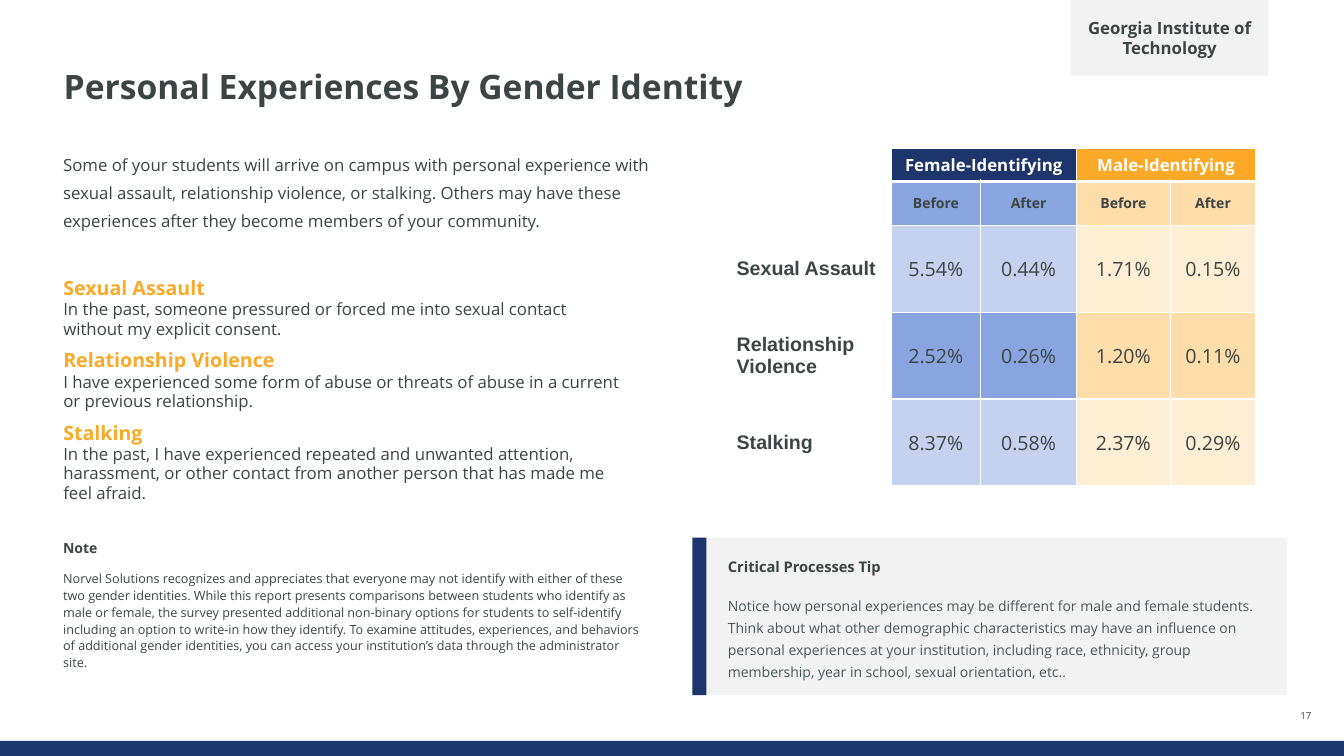
from lxml.etree import SubElement
from pptx import Presentation
from pptx.dml.color import RGBColor
from pptx.enum.shapes import MSO_SHAPE as Shape
from pptx.enum.text import MSO_ANCHOR as Anchor, MSO_AUTO_SIZE as AutoSize, PP_ALIGN as Align
from pptx.oxml.ns import qn
from pptx.util import Pt

WHITE = RGBColor(0xFF, 0xFF, 0xFF)
INK = RGBColor(0x3C, 0x45, 0x43)
TIP_INK = RGBColor(0x4C, 0x57, 0x58)
PALE_GREY = RGBColor(0xF2, 0xF2, 0xF2)
NAVY = RGBColor(0x1C, 0x36, 0x6B)
BLUE = RGBColor(0x88, 0xA5, 0xE0)
PALE_BLUE = RGBColor(0xC4, 0xD2, 0xEF)
ORANGE = RGBColor(0xFB, 0xA9, 0x27)
PEACH = RGBColor(0xFD, 0xDD, 0xA9)
PALE_PEACH = RGBColor(0xFE, 0xEE, 0xD4)

INTRO = ("Some of your students will arrive on campus with personal experience with "
         "sexual assault, relationship violence, or stalking. Others may have these "
         "experiences after they become members of your community.")
DEFINITIONS = [
    ("Sexual Assault",
     "In the past, someone pressured or forced me into sexual contact "
     "without my explicit consent."),
    ("Relationship Violence",
     "I have experienced some form of abuse or threats of abuse in a current "
     "or previous relationship."),
    ("Stalking",
     "In the past, I have experienced repeated and unwanted attention, harassment, "
     "or other contact from another person that has made me feel afraid."),
]
NOTE = ("Norvel Solutions recognizes and appreciates that everyone may not identify with "
        "either of these two gender identities. While this report presents comparisons "
        "between students who identify as male or female, the survey presented additional "
        "non-binary options for students to self-identify including an option to write-in "
        "how they identify. To examine attitudes, experiences, and behaviors of additional "
        "gender identities, you can access your institution’s data through the "
        "administrator site.")
TIP = ("Notice how personal experiences may be different for male and female students. "
       "Think about what other demographic characteristics may have an influence on "
       "personal experiences at your institution, including race, ethnicity, group "
       "membership, year in school, sexual orientation, etc..")
RATES = [
    ["", "Female-Identifying", "", "Male-Identifying", ""],
    ["", "Before", "After", "Before", "After"],
    ["Sexual Assault", "5.54%", "0.44%", "1.71%", "0.15%"],
    ["Relationship Violence", "2.52%", "0.26%", "1.20%", "0.11%"],
    ["Stalking", "8.37%", "0.58%", "2.37%", "0.29%"],
]
# Female and male fills of each table row
ROW_FILLS = [(NAVY, ORANGE), (BLUE, PEACH), (PALE_BLUE, PALE_PEACH),
             (BLUE, PEACH), (PALE_BLUE, PALE_PEACH)]
COLUMN_WIDTHS = [117.5, 64, 68.5, 67, 61]
ROW_HEIGHTS = [23, 31.5, 62, 62, 62]


def assign(target, values):
    for name, value in values.items():
        setattr(target, name, value)


class ReportSlide:
    font_name = "Open Sans"

    def __init__(self, deck):
        self.slide = deck.slides.add_slide(deck.slide_layouts[1])
        self.shapes = self.slide.shapes

    def add_run(self, paragraph, text, size, color=INK, bold=False, name=None):
        run = paragraph.add_run()
        run.text = text
        assign(run.font, {"size": Pt(size), "bold": bold, "name": name or self.font_name})
        run.font.color.rgb = color

    def frame(self, shape, anchor=Anchor.TOP, insets=(7.2, 3.6, 7.2, 3.6)):
        left, top, right, bottom = map(Pt, insets)
        assign(shape.text_frame, {
            "word_wrap": True, "auto_size": AutoSize.NONE, "vertical_anchor": anchor,
            "margin_left": left, "margin_top": top,
            "margin_right": right, "margin_bottom": bottom})
        return shape.text_frame

    def fill_text(self, frame, paragraphs, before=0, bullets_off=False, **paragraph_format):
        """Fill a frame; each paragraph is a list of run tuples, one per line."""
        for index, lines in enumerate(paragraphs):
            paragraph = frame.add_paragraph() if index else frame.paragraphs[0]
            if bullets_off:
                properties = paragraph._p.get_or_add_pPr()
                properties.set("marL", "0")
                properties.set("indent", "0")
                SubElement(properties, qn("a:buNone"))
            assign(paragraph, {"alignment": Align.LEFT, **paragraph_format,
                               "space_before": Pt(before if index else 0)})
            for line_index, line in enumerate(lines):
                if line_index:
                    paragraph.add_line_break()
                self.add_run(paragraph, *line)

    def place(self, shape, box):
        assign(shape, dict(zip(("left", "top", "width", "height"), map(Pt, box))))

    def title(self, box, text):
        self.place(self.shapes.title, box)
        frame = self.frame(self.shapes.title, insets=(0, 0, 0, 0))
        self.fill_text(frame, [[(text, 24, INK, True)]], line_spacing=0.9)

    def body(self, box, paragraphs, **style):
        body = self.slide.placeholders[1]
        self.place(body, box)
        self.fill_text(self.frame(body), paragraphs, bullets_off=True, **style)

    def text(self, box, paragraphs, anchor=Anchor.TOP, insets=(7.2, 3.6, 7.2, 3.6), **style):
        textbox = self.shapes.add_textbox(*map(Pt, box))
        self.fill_text(self.frame(textbox, anchor, insets), paragraphs, **style)

    def panel(self, box, fill, paragraphs=(), insets=(7.2, 0, 7.2, 0), **style):
        panel = self.shapes.add_shape(Shape.RECTANGLE, *map(Pt, box))
        panel.shadow.inherit = False
        panel.fill.solid()
        panel.fill.fore_color.rgb = fill
        panel.line.fill.background()
        self.fill_text(self.frame(panel, Anchor.MIDDLE, insets), paragraphs, **style)

    def cell_borders(self, cell, bottom):
        properties = cell._tc.get_or_add_tcPr()
        for position, (side, width) in enumerate(
                [("lnL", 1), ("lnR", 1), ("lnT", 1), ("lnB", bottom)]):
            line = SubElement(properties, qn(f"a:{side}"), w=str(Pt(width)))
            fill = SubElement(line, qn("a:solidFill"))
            SubElement(fill, qn("a:srgbClr"), val=str(WHITE))
            properties.insert(position, line)

    def rates_table(self, left, top):
        table = self.shapes.add_table(
            len(RATES), len(COLUMN_WIDTHS), Pt(left), Pt(top),
            Pt(sum(COLUMN_WIDTHS)), Pt(sum(ROW_HEIGHTS))).table
        assign(table, {"first_row": False, "horz_banding": False})
        for column, width in zip(table.columns, COLUMN_WIDTHS):
            column.width = Pt(width)
        for row, height in zip(table.rows, ROW_HEIGHTS):
            row.height = Pt(height)
        for r, values in enumerate(RATES):
            for c, value in enumerate(values):
                cell = table.cell(r, c)
                cell.vertical_anchor = Anchor.MIDDLE
                cell.fill.solid()
                cell.fill.fore_color.rgb = ROW_FILLS[r][c > 2] if c else WHITE
                self.cell_borders(cell, bottom=1 if r else 3)
                style = (12 if r == 0 else 10 if r == 1 else 14,
                         INK if r else WHITE,
                         r < 2 or c == 0,
                         "Arial" if c == 0 else None)
                self.fill_text(cell.text_frame, [[(value, *style)]],
                               alignment=Align.CENTER if c else Align.LEFT)
        for start, end in [((0, 0), (1, 0)), ((0, 1), (0, 2)), ((0, 3), (0, 4))]:
            table.cell(*start).merge(table.cell(*end))


def main():
    deck = Presentation()
    assign(deck, {"slide_width": Pt(960), "slide_height": Pt(540)})
    page = ReportSlide(deck)

    page.panel((0, 529.2, 960, 10.8), NAVY)
    page.title((45.5, 50, 852, 50), "Personal Experiences By Gender Identity")
    page.text((914.5, 504.5, 36.5, 11), [[("17", 7)]], Anchor.BOTTOM, (0, 0, 0, 0),
              alignment=Align.CENTER)
    page.rates_table(519, 106)
    page.text((38, 101.5, 468, 70.5), [[(INTRO, 12)]], line_spacing=Pt(20))
    page.body((38, 196.5, 415, 171.5),
              [[(term, 14, ORANGE, True), (meaning, 12)] for term, meaning in DEFINITIONS],
              before=7.5, space_after=Pt(2), line_spacing=Pt(14))
    page.text((38, 384, 428, 96), [[("Note", 10, INK, True)], [(NOTE, 9)]], Anchor.MIDDLE,
              before=7.5, space_after=Pt(2), line_spacing=Pt(12))
    page.panel((502, 384, 417.5, 112.5), PALE_GREY,
               [[("Critical Processes Tip", 10.5, INK, True)], [(TIP, 10, TIP_INK)]],
               insets=(18, 0, 14.4, 0), before=12, line_spacing=1.3)
    page.panel((494.5, 384, 10, 112.5), NAVY)
    page.panel((765, 0, 141, 54), PALE_GREY,
               [[("Georgia Institute of Technology", 12, INK, True)]], alignment=Align.CENTER)

    deck.save("out.pptx")


if __name__ == "__main__":
    main()
